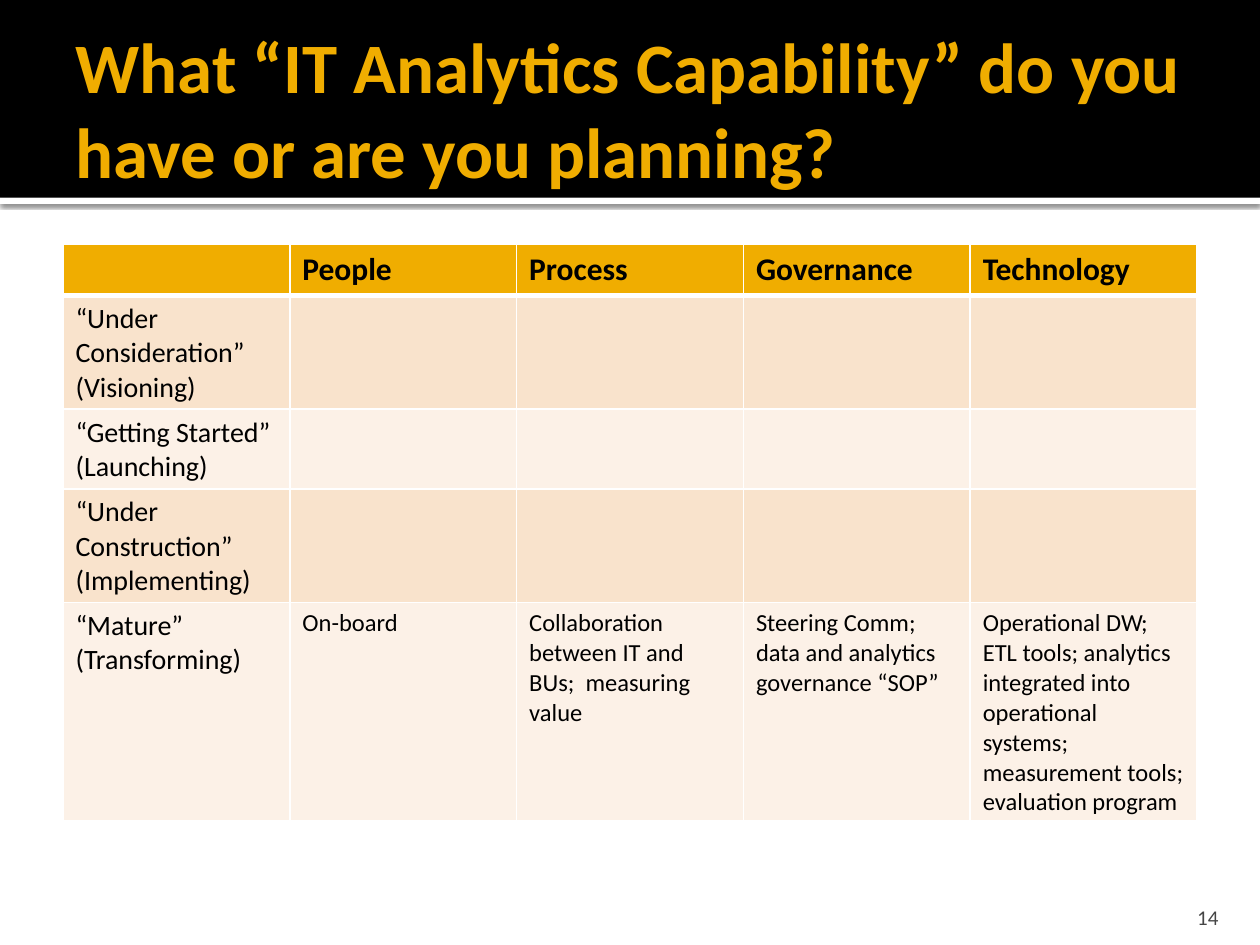
"""Builds the slide with the IT analytics capability maturity table."""
from lxml.etree import SubElement
from pptx import Presentation
from pptx.dml.color import RGBColor
from pptx.enum.shapes import MSO_SHAPE
from pptx.enum.text import MSO_ANCHOR, PP_ALIGN
from pptx.oxml import parse_xml
from pptx.oxml.ns import nsdecls, qn
from pptx.util import Pt

TITLE = "What “IT Analytics Capability” do you have or are you planning?"
PAGE_NUMBER = "14"
HEADINGS = ["", "People", "Process", "Governance", "Technology"]
STAGES = [
    ["“Under Consideration” (Visioning)", "", "", "", ""],
    ["“Getting Started” (Launching)", "", "", "", ""],
    ["“Under Construction” (Implementing)", "", "", "", ""],
    [
        "“Mature” (Transforming)",
        "On-board",
        "Collaboration between IT and BUs;  measuring value",
        "Steering Comm; data and analytics governance “SOP”",
        "Operational DW; ETL tools; analytics integrated into operational "
        "systems; measurement tools; evaluation program",
    ],
]
FONT = "Calibri"
BLACK, WHITE, GOLD, GREY = "000000", "FFFFFF", "F0AD00", "454545"
BANDS = ["F9E3CC", "FCF1E7"]
SLIDE_WIDTH, SLIDE_HEIGHT = 720, 540
BANNER_HEIGHT, STRIP_HEIGHT = 113, 3.6
TABLE_LEFT, TABLE_TOP, COLUMN_WIDTH, ROW_HEIGHT = 36, 139.8, 129.6, 29.2
SHADOW = (
    f'<a:effectLst {nsdecls("a")}><a:outerShdw blurRad="{Pt(2.5)}" dist="{Pt(0.8)}" '
    'dir="5400000" algn="tl" rotWithShape="0"><a:srgbClr val="000000">'
    '<a:alpha val="60000"/></a:srgbClr></a:outerShdw></a:effectLst>'
)


def color(value):
    return RGBColor.from_string(value)


def style(frame, size, value, bold=False):
    for paragraph in frame.paragraphs:
        for run in paragraph.runs:
            run.font.name, run.font.size, run.font.bold = FONT, Pt(size), bold
            run.font.color.rgb = color(value)


def add_band(slide, top, height, fill):
    band = slide.shapes.add_shape(
        MSO_SHAPE.RECTANGLE, 0, Pt(top), Pt(SLIDE_WIDTH), Pt(height))
    band.shadow.inherit = False
    band.fill.solid()
    band.fill.fore_color.rgb = color(fill)
    band.line.fill.background()
    return band


def add_text(slide, text, box, margins, anchor, size, value, bold=False):
    frame = slide.shapes.add_textbox(*map(Pt, box)).text_frame
    frame.word_wrap = True
    frame.vertical_anchor = anchor
    (frame.margin_left, frame.margin_top,
     frame.margin_right, frame.margin_bottom) = map(Pt, margins)
    frame.text = text
    style(frame, size, value, bold)
    return frame


def set_borders(cell, bottom):
    properties = cell._tc.get_or_add_tcPr()
    widths = {"lnL": 1, "lnR": 1, "lnT": 1, "lnB": bottom}
    for position, (side, width) in enumerate(widths.items()):
        border = SubElement(properties, qn(f"a:{side}"), w=str(Pt(width)))
        fill = SubElement(border, qn("a:solidFill"))
        SubElement(fill, qn("a:srgbClr"), val=WHITE)
        properties.insert(position, border)


def add_stage_table(slide):
    rows = [HEADINGS] + STAGES
    columns = len(HEADINGS)
    table = slide.shapes.add_table(
        len(rows), columns, Pt(TABLE_LEFT), Pt(TABLE_TOP),
        Pt(COLUMN_WIDTH * columns), Pt(ROW_HEIGHT * len(rows))).table
    for column in table.columns:
        column.width = Pt(COLUMN_WIDTH)
    for r, texts in enumerate(rows):
        table.rows[r].height = Pt(ROW_HEIGHT)
        heading = r == 0
        for c, text in enumerate(texts):
            cell = table.cell(r, c)
            cell.text = text
            size = 18 if heading else 16 if c == 0 else 14
            style(cell.text_frame, size, BLACK, heading)
            cell.fill.solid()
            cell.fill.fore_color.rgb = color(GOLD if heading else BANDS[(r - 1) % 2])
            set_borders(cell, 3 if heading else 1)
            if r == 1:
                top = cell._tc.tcPr.find(qn("a:lnT"))
                top.set("w", str(Pt(3)))


def main():
    deck = Presentation()
    deck.slide_width, deck.slide_height = Pt(SLIDE_WIDTH), Pt(SLIDE_HEIGHT)
    slide = deck.slides.add_slide(deck.slide_layouts[6])
    strip = add_band(slide, BANNER_HEIGHT, STRIP_HEIGHT, WHITE)
    properties = strip._element.spPr
    properties.replace(properties.find(qn("a:effectLst")), parse_xml(SHADOW))
    add_band(slide, 0, BANNER_HEIGHT, BLACK)
    add_text(slide, TITLE, (36, 12.2, 648, 98.6), (7.2, 3.6, 3.6, 3.6),
             MSO_ANCHOR.MIDDLE, 40.5, GOLD, True)
    add_stage_table(slide)
    number = add_text(slide, PAGE_NUMBER, (645.8, 509.8, 57.6, 21.6), (7.2, 3.6, 7.2, 0),
                      MSO_ANCHOR.BOTTOM, 12, GREY)
    number.paragraphs[0].alignment = PP_ALIGN.RIGHT
    deck.save("out.pptx")


if __name__ == "__main__":
    main()
